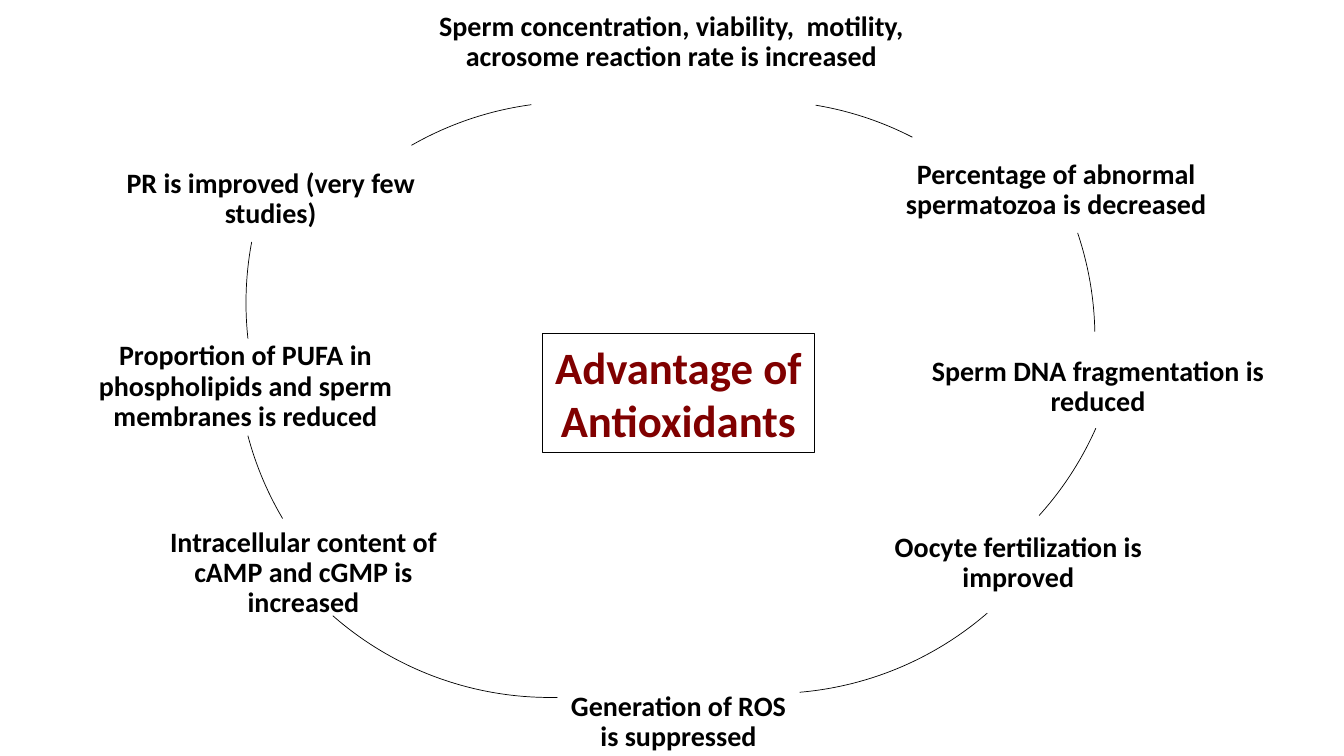
import math

import pptx
import pptx.dml.color
import pptx.enum.shapes
import pptx.enum.text
import pptx.util
from pptx.util import Inches

FONT = "Calibri"
BLACK, MAROON = "000000", "800000"
DIAMETER = 6.53

# text, left, middle, width, height
BENEFITS = [
    ("Sperm concentration, viability,  motility, acrosome reaction rate is increased", 3.91, 0.42, 5.5, 0.85),
    ("Percentage of abnormal spermatozoa is decreased", 8.38, 1.89, 4.19, 0.85),
    ("Sperm DNA fragmentation is reduced", 8.95, 3.84, 3.88, 0.85),
    ("Oocyte fertilization is improved", 8.55, 5.59, 3.1, 0.85),
    ("Generation of ROS is suppressed", 5.58, 7.17, 2.3, 0.62),
    ("Intracellular content of cAMP and cGMP is increased", 1.31, 5.69, 3.4, 0.94),
    ("Proportion of PUFA in phospholipids and sperm membranes is reduced", 0.36, 3.84, 4.15, 0.94),
    ("PR is improved (very few studies)", 1.12, 1.98, 3.13, 0.85),
]

# circle's left and top, then the points where its clockwise arc starts and ends
ARCS = [
    ((4.29, 1.0), (8.09, 1.04), (9.05, 1.36)),
    ((4.33, 0.09), (10.69, 2.31), (10.86, 3.29)),
    ((4.62, -0.34), (10.87, 4.25), (10.3, 5.11)),
    ((4.39, 0.35), (9.79, 6.08), (7.93, 6.86)),
    ((2.19, 0.39), (5.53, 6.92), (3.3, 6.11)),
    ((2.35, 0.22), (2.81, 5.14), (2.47, 4.32)),
    ((2.44, -0.26), (2.46, 3.36), (2.49, 2.4)),
    ((2.44, 1.01), (4.08, 1.44), (5.27, 1.04)),
]


def rgb(value):
    return pptx.dml.color.RGBColor.from_string(value)


def add_text(page, text, left, top, width, height, size=20, color=BLACK,
             spacing=1.0, margin_x=0.08, margin_y=0):
    box = page.shapes.add_textbox(Inches(left), Inches(top), Inches(width), Inches(height))
    frame = box.text_frame
    frame.word_wrap = True
    frame.vertical_anchor = pptx.enum.text.MSO_ANCHOR.MIDDLE
    frame.margin_left = frame.margin_right = Inches(margin_x)
    frame.margin_top = frame.margin_bottom = Inches(margin_y)
    para = frame.paragraphs[0]
    para.alignment = pptx.enum.text.PP_ALIGN.CENTER
    para.line_spacing = spacing
    span = para.add_run()
    span.text = text
    span.font.name = FONT
    span.font.size = pptx.util.Pt(size)
    span.font.bold = True
    span.font.color.rgb = rgb(color)
    return box


def outline(shape):
    shape.line.color.rgb = rgb(BLACK)
    shape.line.width = pptx.util.Pt(0.5)


def add_arc(page, corner, start, end):
    left, top = corner
    arc = page.shapes.add_shape(pptx.enum.shapes.MSO_SHAPE.ARC, Inches(left), Inches(top),
                                Inches(DIAMETER), Inches(DIAMETER))
    for index, (x, y) in enumerate((start, end)):
        angle = math.atan2(y - top - DIAMETER / 2, x - left - DIAMETER / 2)
        # Angles are stored in 1/60000 degree; adjustments are scaled by 100000.
        arc.adjustments[index] = math.degrees(angle) % 360 * 0.6
    arc.shadow.inherit = False
    arc.fill.background()
    outline(arc)


def main():
    deck = pptx.Presentation()
    deck.slide_width, deck.slide_height = Inches(13.33), Inches(7.5)
    page = deck.slides.add_slide(deck.slide_layouts[6])

    for text, left, middle, width, height in BENEFITS:
        add_text(page, text, left, middle - height / 2, width, height, spacing=0.9)
    for corner, start, end in ARCS:
        add_arc(page, corner, start, end)
    title = add_text(page, "Advantage of Antioxidants", 5.38, 3.31, 2.7, 1.18,
                     size=32, color=MAROON, margin_x=0.1, margin_y=0.05)
    outline(title)

    deck.save("out.pptx")


if __name__ == "__main__":
    main()
